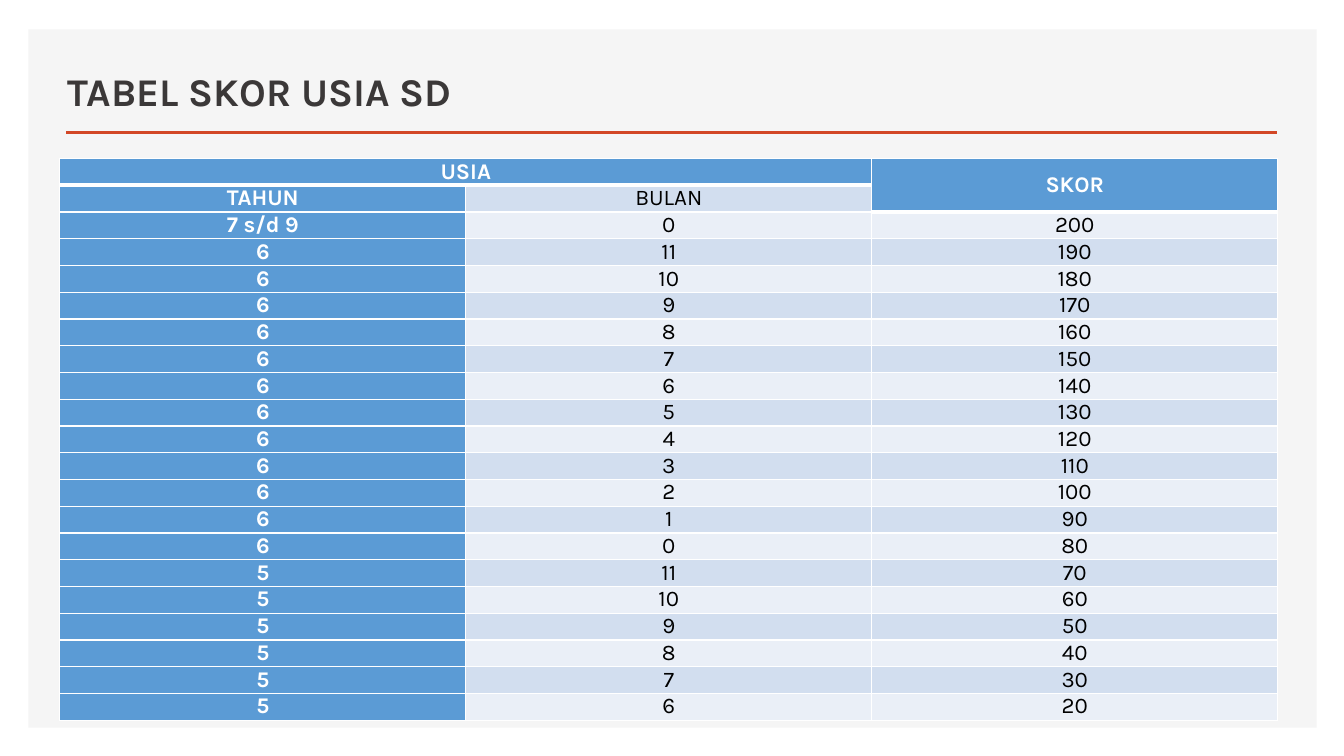
from dataclasses import dataclass

from lxml import etree
from pptx import Presentation
from pptx import util as u
from pptx.dml.color import RGBColor
from pptx.enum import shapes, text
from pptx.oxml.ns import qn

PX = 9525


@dataclass(frozen=True)
class Theme:
    """Colours and type sizes of the slide."""
    font: str = "Karla"
    title: int = 28
    cell: int = 16
    ink: str = "3B3838"
    body: str = "000000"
    panel: str = "F5F5F5"
    rule: str = "D24726"
    white: str = "FFFFFF"
    head: str = "5B9BD5"
    bands: tuple = ("EAEFF7", "D2DEEF")


T = Theme()
HEADS = (1, 1, 2)
ROWS = [("USIA", "", "SKOR"), ("TAHUN", "BULAN", ""), ("7 s/d 9", "0", "200")]
for step in range(1, 19):
    year, month = divmod(7 * 12 - step, 12)
    ROWS.append((str(year), str(month), str(200 - 10 * step)))


def rgb(code):
    """Turn a hex code into a colour."""
    return RGBColor.from_string(code)


def emu(*px):
    """Turn px lengths into EMU."""
    return [u.Emu(n * PX) for n in px]


def style(para, size, color, bold):
    """Set the font of one paragraph."""
    font = para.font
    font.name, font.size, font.bold = T.font, u.Pt(size), bold
    font.color.rgb = rgb(color)


def edge(cell, side, width):
    """Draw one white border of a cell."""
    props = cell._tc.get_or_add_tcPr()
    line = etree.SubElement(props, qn(f"a:ln{side}"), w=str(u.Pt(width)))
    fill = etree.SubElement(line, qn("a:solidFill"))
    etree.SubElement(fill, qn("a:srgbClr"), val=T.white)


def panel(slide, x, y, w, h):
    """Place the grey panel and the rule under the title."""
    back = slide.shapes.add_shape(shapes.MSO_SHAPE.RECTANGLE, *emu(x, y, w, h))
    back.shadow.inherit = False
    back.fill.solid()
    back.fill.fore_color.rgb = rgb(T.panel)
    back.line.fill.background()
    ends = emu(x + 36, y + 98, x + w - 38, y + 98)
    rule = slide.shapes.add_connector(shapes.MSO_CONNECTOR.STRAIGHT, *ends)
    rule.line.color.rgb = rgb(T.rule)
    rule.line.width = u.Pt(2)
    etree.SubElement(rule._element.spPr, qn("a:effectLst"))


def title(slide, words, x, y, w, h):
    """Fill the title placeholder and bring it in front of the panel."""
    shape = slide.shapes.title
    shape.left, shape.top, shape.width, shape.height = emu(x, y, w, h)
    frame = shape.text_frame
    frame.text = words
    frame.auto_size = text.MSO_AUTO_SIZE.NONE
    frame.vertical_anchor = text.MSO_ANCHOR.BOTTOM
    para = frame.paragraphs[0]
    para.alignment = text.PP_ALIGN.LEFT
    style(para, T.title, T.ink, True)
    slide.shapes._spTree.append(shape._element)


def fill(cell, words, row, col):
    """Write, colour and border one table cell."""
    head = HEADS[col]
    strong = col == 0 or row < head
    cell.margin_left = cell.margin_right = u.Inches(0.06)
    cell.margin_top = cell.margin_bottom = 0
    for side in "LR":
        edge(cell, side, 1)
    edge(cell, "T", 3 if row == head else 1)
    edge(cell, "B", 3 if row < head else 1)
    cell.fill.solid()
    cell.fill.fore_color.rgb = rgb(T.head if strong else T.bands[row % 2])
    cell.text = words
    para = cell.text_frame.paragraphs[0]
    para.alignment = text.PP_ALIGN.CENTER
    style(para, T.cell, T.white if strong else T.body, strong)


def scores(slide, x, y, w, h):
    """Place the score table with its two header rows."""
    size = len(ROWS), len(HEADS)
    grid = slide.shapes.add_table(*size, *emu(x, y, w, h)).table
    for row in grid.rows:
        row.height = u.Emu(h * PX // len(ROWS))
    for r, words in enumerate(ROWS):
        for c, word in enumerate(words):
            fill(grid.cell(r, c), word, r, c)
    grid.cell(0, 0).merge(grid.cell(0, 1))
    grid.cell(0, 2).merge(grid.cell(1, 2))
    grid.cell(0, 2).vertical_anchor = text.MSO_ANCHOR.MIDDLE


def main():
    """Build and save the slide."""
    deck = Presentation()
    deck.slide_width, deck.slide_height = emu(1280, 720)
    slide = deck.slides.add_slide(deck.slide_layouts[5])
    panel(slide, 27, 28, 1227, 665)
    title(slide, "TABEL SKOR USIA SD", 55, 47, 722, 67)
    scores(slide, 57, 151, 1160, 535)
    deck.save("out.pptx")


if __name__ == "__main__":
    main()
